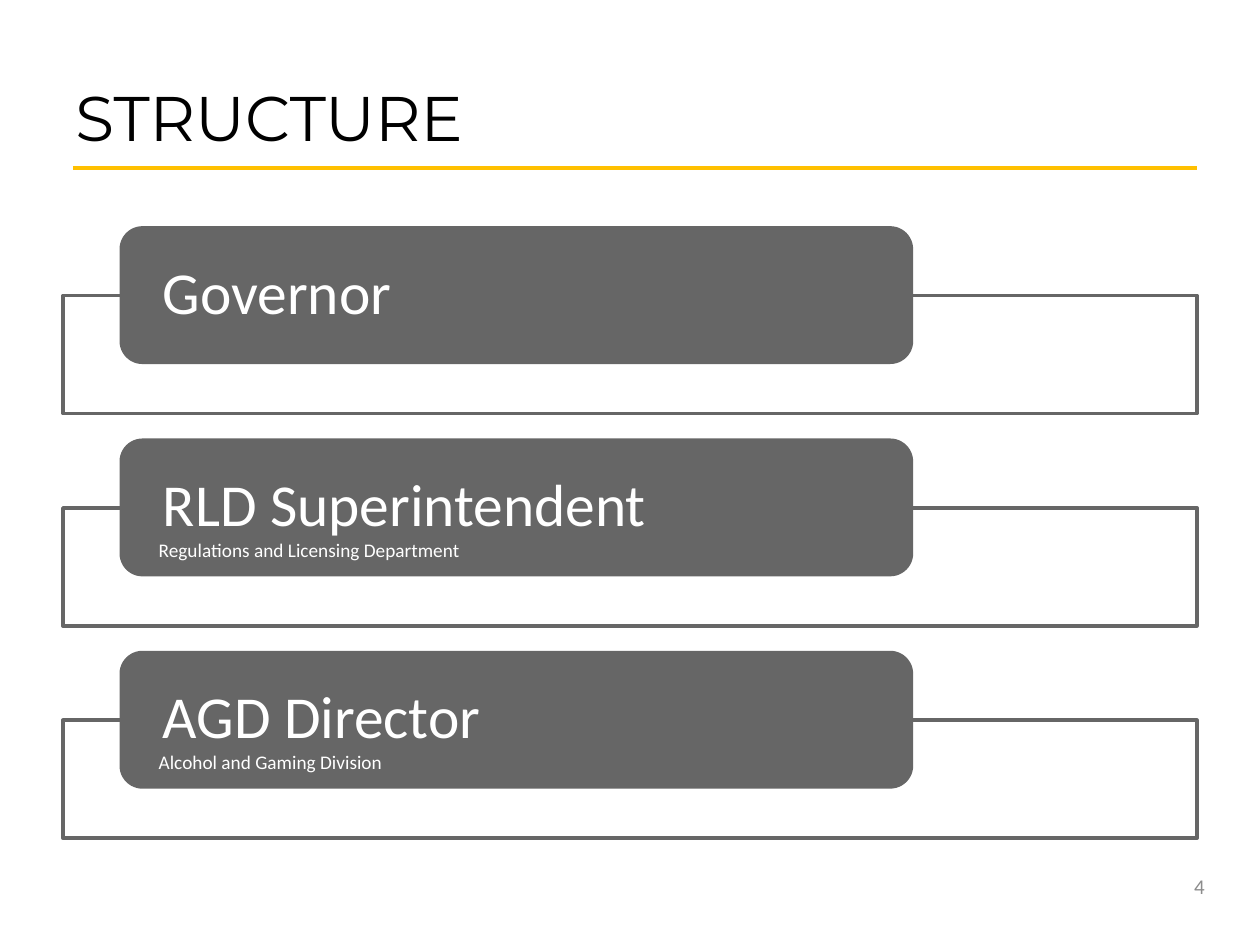
from dataclasses import dataclass

import pptx
import pptx.dml.color
import pptx.enum.shapes
import pptx.enum.text
import pptx.oxml
import pptx.oxml.ns
import pptx.util
from pptx.util import Cm

COLORS = {
    "black": "000000",
    "white": "FFFFFF",
    "gray": "666666",
    "page": "8C8C8C",
    "gold": "FFC000",
}
ALIGN = pptx.enum.text.PP_ALIGN
ANCHOR = pptx.enum.text.MSO_ANCHOR
SHAPE = pptx.enum.shapes.MSO_SHAPE

FIRST_TOP = 4.56
PITCH = 4.28


@dataclass
class Tier:
    role: str
    caption: str = ""


TIERS = [
    Tier("Governor"),
    Tier("RLD Superintendent", "Regulations and Licensing Department"),
    Tier("AGD Director", "Alcohol and Gaming Division"),
]


def rgb(name: str) -> pptx.dml.color.RGBColor:
    return pptx.dml.color.RGBColor.from_string(COLORS[name])


def write(sp, text: str, *, size: float, color: str = "white",
          font: str = "Calibri", align=ALIGN.LEFT, anchor=ANCHOR.MIDDLE,
          inset: float = 0.25, spacing: float = 1.0) -> None:
    tf = sp.text_frame
    tf.word_wrap = True
    tf.auto_size = pptx.enum.text.MSO_AUTO_SIZE.NONE
    tf.vertical_anchor = anchor
    tf.margin_left = tf.margin_right = Cm(inset)
    p = tf.paragraphs[0]
    p.alignment = align
    p.line_spacing = spacing
    r = p.add_run()
    r.text = text
    r.font.name = font
    r.font.size = pptx.util.Pt(size)
    r.font.color.rgb = rgb(color)


def add_box(s, kind, left: float, top: float, width: float, height: float,
            fill: str):
    sp = s.shapes.add_shape(kind, Cm(left), Cm(top), Cm(width), Cm(height))
    sp.shadow.inherit = False
    sp.fill.solid()
    sp.fill.fore_color.rgb = rgb(fill)
    sp.line.fill.background()
    return sp


def set_opacity(sp, percent: int) -> None:
    color = sp.fill._xPr.find(".//" + pptx.oxml.ns.qn("a:srgbClr"))
    color.append(pptx.oxml.parse_xml(
        f'<a:alpha {pptx.oxml.ns.nsdecls("a")} val="{percent * 1000}"/>'))


def add_tier(s, tier: Tier, top: float) -> None:
    frame = add_box(s, SHAPE.RECTANGLE, 1.27, top + 1.4, 22.86, 2.38, "white")
    set_opacity(frame, 90)
    frame.line.color.rgb = rgb("gray")
    frame.line.width = pptx.util.Pt(2)

    pill = add_box(s, SHAPE.ROUNDED_RECTANGLE, 2.41, top, 16, 2.78, "gray")
    write(pill, tier.role, size=34, inset=0.74, spacing=0.9)

    if tier.caption:
        tb = s.shapes.add_textbox(Cm(2.95), Cm(top + 1.88), Cm(8.46), Cm(0.74))
        write(tb, tier.caption, size=11, anchor=ANCHOR.TOP)


def add_rule(s) -> None:
    line = s.shapes.add_connector(pptx.enum.shapes.MSO_CONNECTOR.STRAIGHT,
                                  Cm(1.47), Cm(3.39), Cm(24.13), Cm(3.39))
    line.line.color.rgb = rgb("gold")
    line.line.width = pptx.util.Pt(2.25)
    line._element.spPr.append(pptx.oxml.parse_xml(
        f'<a:effectLst {pptx.oxml.ns.nsdecls("a")}/>'))


def main() -> None:
    prs = pptx.Presentation()
    prs.slide_width, prs.slide_height = Cm(25.4), Cm(19.05)
    s = prs.slides.add_slide(prs.slide_layouts.get_by_name("Title Only"))

    title = s.shapes.title
    title.left, title.top = Cm(1.27), Cm(0.76)
    title.width, title.height = Cm(22.86), Cm(3.18)
    write(title, "STRUCTURE", size=36, color="black", font="Montserrat")

    for i, tier in enumerate(TIERS):
        add_tier(s, tier, FIRST_TOP + i * PITCH)

    number = s.shapes.add_textbox(Cm(18.62), Cm(17.35), Cm(5.92), Cm(1.02))
    write(number, "4", size=12, color="page", align=ALIGN.RIGHT)
    add_rule(s)

    prs.save("out.pptx")


if __name__ == "__main__":
    main()
